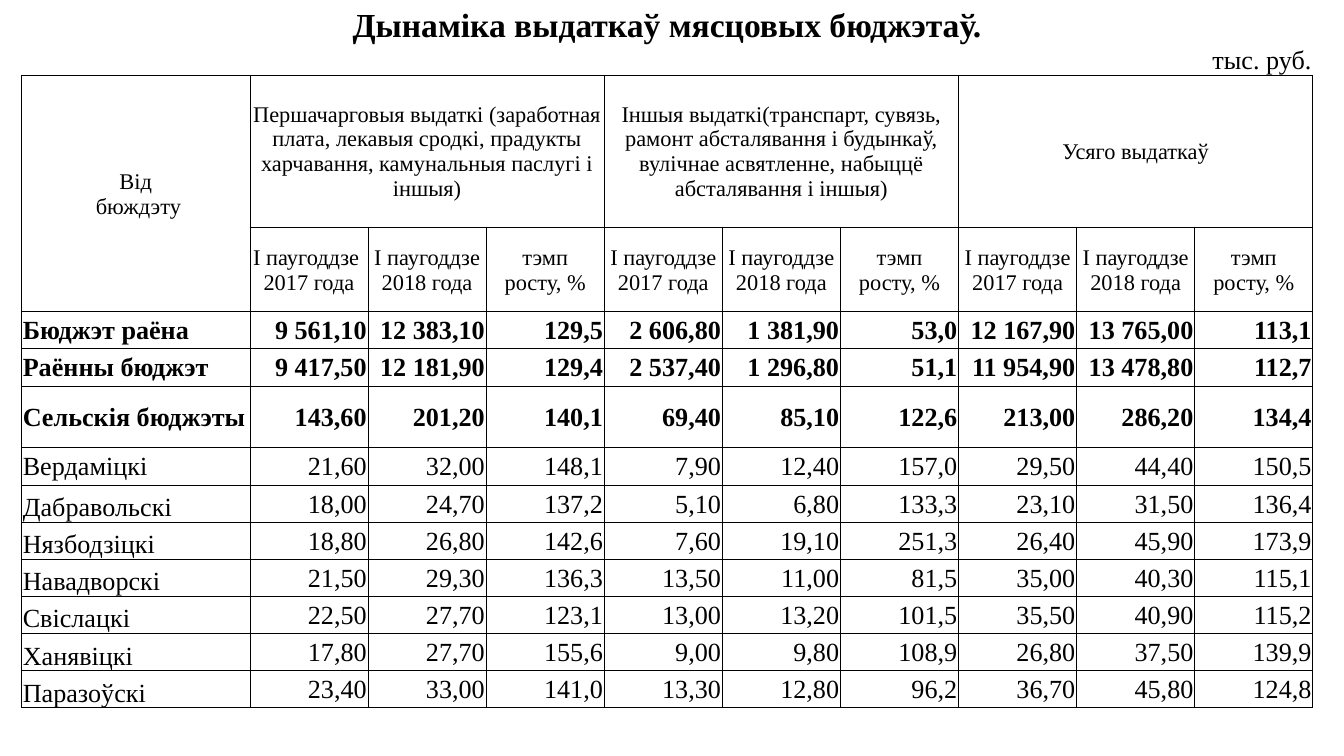
import pptx
import pptx.util
import pptx.dml.color
import pptx.enum.text
import pptx.oxml
import pptx.oxml.ns

Inches = pptx.util.Inches
Pt = pptx.util.Pt
ALIGN = pptx.enum.text.PP_ALIGN
ANCHOR = pptx.enum.text.MSO_ANCHOR

COLORS = {"ink": "000000"}
FONT = "Times New Roman"
PLAIN_STYLE = "{2D5ABB26-0587-4C30-8999-92F81FD0307C}"
SLIDE_WIDTH = 10
NAME_WIDTH, TABLE_WIDTH = 1.7, 9.61
COLUMN_WIDTHS = [NAME_WIDTH] + [(TABLE_WIDTH - NAME_WIDTH) / 9] * 9
VILLAGES_HEIGHT, BUDGETS_HEIGHT = 0.46, 2.95
LINE_HEIGHT = (BUDGETS_HEIGHT - VILLAGES_HEIGHT) / 9
ROW_HEIGHTS = ([0.3, 0.23, 1.13, 0.63] + [LINE_HEIGHT] * 2
               + [VILLAGES_HEIGHT] + [LINE_HEIGHT] * 7)
FIRST_GRID_ROW, FIRST_BUDGET_ROW = 2, 4
SUMMARY_COUNT = 3

TITLE = "Дынаміка выдаткаў мясцовых бюджэтаў."
UNIT = "тыс. руб."
ROW_LABEL = ["Від", " бюждэту"]
EXPENSE_GROUPS = [
    "Першачарговыя выдаткі (заработная плата, лекавыя сродкі, прадукты "
    "харчавання, камунальныя паслугі і іншыя)",
    "Іншыя выдаткі(транспарт, сувязь, рамонт абсталявання і будынкаў, "
    "вулічнае асвятленне, набыццё абсталявання і іншыя)",
    "Усяго выдаткаў",
]
GROWTH = ["тэмп", "росту, %"]
FIRST_PERIODS = [["I паугоддзе ", "2017 года"], ["I паугоддзе", "2018 года"], GROWTH]
NEXT_PERIODS = [["I паугоддзе 2017 года"], ["I паугоддзе 2018 года"], GROWTH]
BUDGETS = [
    ["Бюджэт раёна", "9 561,10", "12 383,10", "129,5", "2 606,80", "1 381,90", "53,0",
     "12 167,90", "13 765,00", "113,1"],
    ["Раённы бюджэт", "9 417,50", "12 181,90", "129,4", "2 537,40", "1 296,80", "51,1",
     "11 954,90", "13 478,80", "112,7"],
    ["Сельскія бюджэты", "143,60", "201,20", "140,1", "69,40", "85,10", "122,6",
     "213,00", "286,20", "134,4"],
    ["Вердаміцкі", "21,60", "32,00", "148,1", "7,90", "12,40", "157,0",
     "29,50", "44,40", "150,5"],
    ["Дабравольскі", "18,00", "24,70", "137,2", "5,10", "6,80", "133,3",
     "23,10", "31,50", "136,4"],
    ["Нязбодзіцкі", "18,80", "26,80", "142,6", "7,60", "19,10", "251,3",
     "26,40", "45,90", "173,9"],
    ["Навадворскі", "21,50", "29,30", "136,3", "13,50", "11,00", "81,5",
     "35,00", "40,30", "115,1"],
    ["Свіслацкі", "22,50", "27,70", "123,1", "13,00", "13,20", "101,5",
     "35,50", "40,90", "115,2"],
    ["Ханявіцкі", "17,80", "27,70", "155,6", "9,00", "9,80", "108,9",
     "26,80", "37,50", "139,9"],
    ["Паразоўскі", "23,40", "33,00", "141,0", "13,30", "12,80", "96,2",
     "36,70", "45,80", "124,8"],
]


def add_border(cell, sides):
    """Draw thin lines on the given sides of a cell."""
    properties = cell._tc.get_or_add_tcPr()
    for side in sides:
        properties.append(pptx.oxml.parse_xml(
            f'<a:ln{side} {pptx.oxml.ns.nsdecls("a")} w="{Pt(0.5)}"><a:solidFill>'
            f'<a:srgbClr val="{COLORS["ink"]}"/></a:solidFill></a:ln{side}>'))


def prepare_cell(cell, row):
    """Set the margins, lines and fill of a cell by its row."""
    cell.margin_left = cell.margin_top = cell.margin_right = Inches(0.01)
    cell.margin_bottom = 0
    if row >= FIRST_GRID_ROW:
        add_border(cell, "LRTB")
    elif row == FIRST_GRID_ROW - 1:
        add_border(cell, "B")
    cell.fill.background()
    cell.text_frame.paragraphs[0].font.size = Pt(12)


def write(cell, lines, size, align=ALIGN.CENTER, anchor=ANCHOR.MIDDLE, bold=False):
    """Write one paragraph per line into a cell."""
    cell.vertical_anchor = anchor
    frame = cell.text_frame
    for index, line in enumerate(lines):
        paragraph = frame.add_paragraph() if index else frame.paragraphs[0]
        paragraph.alignment = align
        run = paragraph.add_run()
        run.text = line
        run.font.name = FONT
        run.font.size = Pt(size)
        run.font.bold = bold
        run.font.color.rgb = pptx.dml.color.RGBColor.from_string(COLORS["ink"])


def add_plain_table(slide):
    """Add the empty table with its column widths and row heights."""
    table = slide.shapes.add_table(
        len(ROW_HEIGHTS), len(COLUMN_WIDTHS), Inches(0.16), Inches(0.03),
        Inches(TABLE_WIDTH), Inches(sum(ROW_HEIGHTS))).table
    table.first_row = table.horz_banding = False
    table._tbl.tblPr.find(pptx.oxml.ns.qn("a:tableStyleId")).text = PLAIN_STYLE
    for column, width in zip(table.columns, COLUMN_WIDTHS):
        column.width = Inches(width)
    for index, (row, height) in enumerate(zip(table.rows, ROW_HEIGHTS)):
        row.height = Inches(height)
        for cell in row.cells:
            prepare_cell(cell, index)
    return table


def fill_headings(table):
    """Write the title, the unit and the two heading rows."""
    table.cell(0, 0).merge(table.cell(0, 9))
    write(table.cell(0, 0), [TITLE], 18, anchor=ANCHOR.BOTTOM, bold=True)
    for column in (1, 3, 5):
        table.cell(1, column).merge(table.cell(1, column + 1))
    write(table.cell(1, 9), [UNIT], 14, ALIGN.RIGHT, ANCHOR.BOTTOM)
    table.cell(2, 0).merge(table.cell(3, 0))
    write(table.cell(2, 0), ROW_LABEL, 12)
    for index, group in enumerate(EXPENSE_GROUPS):
        start = 1 + 3 * index
        table.cell(2, start).merge(table.cell(2, start + 2))
        write(table.cell(2, start), [group], 12)
    for column, period in enumerate(FIRST_PERIODS + NEXT_PERIODS * 2, 1):
        write(table.cell(3, column), period, 12)


def fill_budgets(table):
    """Write the budget names and their amounts."""
    for index, (name, *amounts) in enumerate(BUDGETS):
        row = FIRST_BUDGET_ROW + index
        bold = index < SUMMARY_COUNT
        anchor = ANCHOR.BOTTOM if index > SUMMARY_COUNT else ANCHOR.MIDDLE
        write(table.cell(row, 0), [name], 14, ALIGN.LEFT, anchor, bold)
        for column, amount in enumerate(amounts, 1):
            write(table.cell(row, column), [amount], 14, ALIGN.RIGHT, bold=bold)


def main():
    """Build the slide of local budget spending."""
    deck = pptx.Presentation()
    deck.slide_width = Inches(SLIDE_WIDTH)
    deck.slide_height = Inches(SLIDE_WIDTH * 9 / 16)
    slide = deck.slides.add_slide(deck.slide_layouts[6])
    spending = add_plain_table(slide)
    fill_headings(spending)
    fill_budgets(spending)
    deck.save("out.pptx")


if __name__ == "__main__":
    main()
